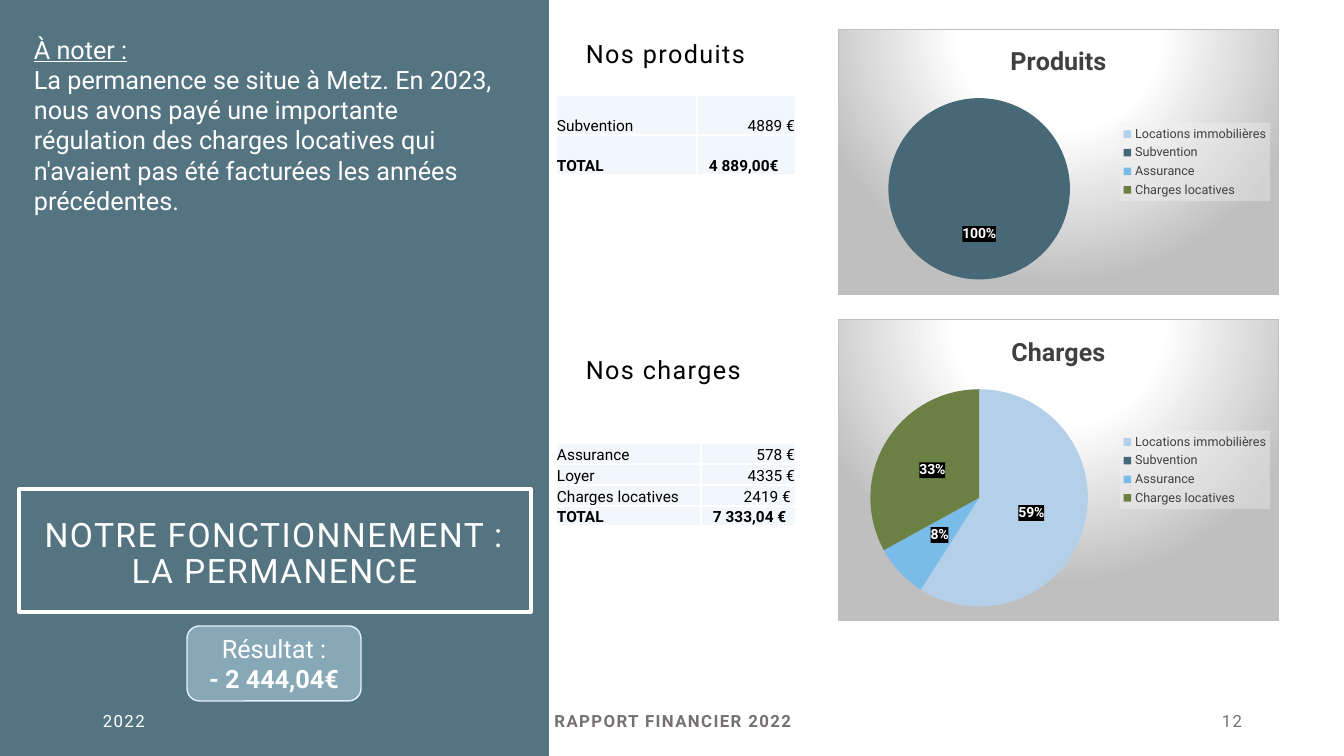
"""Build the finance slide: note, result, tables and pie charts of the office."""
from lxml import etree
from pptx import Presentation
from pptx import util as u
from pptx.chart.data import CategoryChartData
from pptx.dml.color import RGBColor
from pptx.enum import chart as charts, shapes, text
from pptx.oxml import parse_xml
from pptx.oxml.ns import nsdecls, qn

PX = 914400 / 100.8
THEME = {
    "font": "Roboto", "white": "FFFFFF", "black": "000000", "grey": "767171",
    "dark": "404040", "panel": "476977", "badge": "87A9B7", "badge_line": "E4F1FB",
    "cell": "F2F7FB", "border": "BFBFBF", "legend": "F2F2F2",
    "slices": ["B4D0E9", "476977", "79BBE9", "6B8043"],
    "title": 24, "body": 18, "footer": 12, "table": 11, "label": 10, "key": 9,
}
LEFT, CENTER, RIGHT = text.PP_ALIGN.LEFT, text.PP_ALIGN.CENTER, text.PP_ALIGN.RIGHT


def px(*lengths):
    return [u.Emu(round(length * PX)) for length in lengths]


def write(para, words, size, color, align=LEFT, bold=False, spacing=0):
    para.alignment = align
    span = para.add_run()
    span.text = words
    font = span.font
    font.name, font.size, font.bold = THEME["font"], u.Pt(size), bold
    font.color.rgb = RGBColor.from_string(THEME[color])
    if spacing:
        span._r.get_or_add_rPr().set("spc", str(spacing))
    return span


deck = Presentation()
deck.slide_width, deck.slide_height = px(1344, 756)
page = deck.slides.add_slide(deck.slide_layouts[6])

blocks = {}
for name, kind, place, fill, line, weight in [
    ("panel", "RECTANGLE", (0, 0, 549, 756), "panel", None, 0),
    ("frame", "RECTANGLE", (19, 489, 512, 123), None, "white", 2.25),
    ("result", "ROUNDED_RECTANGLE", (187, 626, 174, 75), "badge", "badge_line", 1),
]:
    block = page.shapes.add_shape(getattr(shapes.MSO_SHAPE, kind), *px(*place))
    block.shadow.inherit = False
    if fill:
        block.fill.solid()
        block.fill.fore_color.rgb = RGBColor.from_string(THEME[fill])
    else:
        block.fill.background()
    if line:
        block.line.color.rgb = RGBColor.from_string(THEME[line])
        block.line.width = u.Pt(weight)
    else:
        block.line.fill.background()
    block.text_frame.vertical_anchor = text.MSO_ANCHOR.MIDDLE
    blocks[name] = block

panel_color = blocks["panel"]._element.spPr.find(".//" + qn("a:srgbClr"))
etree.SubElement(panel_color, qn("a:alpha")).set("val", "92000")
blocks["panel"].text_frame.margin_top = px(358)[0]
title = blocks["panel"].text_frame.paragraphs[0]
title.line_spacing = 0.9
write(title, "NOTRE FONCTIONNEMENT :", THEME["title"], "white", CENTER, spacing=100)
title.add_line_break()
write(title, "LA PERMANENCE", THEME["title"], "white", CENTER, spacing=100)

result = blocks["result"].text_frame
write(result.paragraphs[0], "Résultat :", THEME["body"], "white", CENTER)
write(result.add_paragraph(), "- 2 444,04€", THEME["body"], "white", CENTER, True)

for words, place, size, color, align, bold, leading in [
    ("2022", (93, 701, 302, 40), "footer", "white", LEFT, False, 1),
    ("RAPPORT FINANCIER 2022", (446, 701, 454, 40), "footer", "grey", CENTER, True, 1),
    ("12", (950, 701, 302, 40), "footer", "grey", RIGHT, False, 1),
    ("Nos produits", (576, 15, 646, 47), "body", "black", LEFT, False, 2),
    ("Nos charges", (576, 331, 646, 47), "body", "black", LEFT, False, 2),
]:
    box = page.shapes.add_textbox(*px(*place)).text_frame
    box.word_wrap = True
    box.vertical_anchor = text.MSO_ANCHOR.MIDDLE
    box.paragraphs[0].line_spacing = float(leading)
    write(box.paragraphs[0], words, THEME[size], color, align, bold, 100)

note = page.shapes.add_textbox(*px(24, 29, 478, 224)).text_frame
note.word_wrap = True
write(note.paragraphs[0], "À noter :", THEME["body"], "white").font.underline = True
write(note.add_paragraph(),
      "La permanence se situe à Metz. En 2023, nous avons payé une importante régulation "
      "des charges locatives qui n'avaient pas été facturées les années précédentes.",
      THEME["body"], "white")

for top, widths, heights, entries in [
    (95, (141, 99), (40, 40), [("Subvention", "4889 €"), ("TOTAL", "4 889,00€")]),
    (443, (145, 95), (21, 21, 21, 20),
     [("Assurance", "578 €"), ("Loyer", "4335 €"),
      ("Charges locatives", "2419 €"), ("TOTAL", "7 333,04 €")]),
]:
    table = page.shapes.add_table(
        len(entries), 2, *px(556, top, sum(widths), sum(heights))).table
    table.first_row = table.horz_banding = False
    for column, width in zip(table.columns, px(*widths)):
        column.width = width
    for row, height, entry in zip(table.rows, px(*heights), entries):
        row.height = height
        total = entry[0] == "TOTAL"
        for index, (cell, words) in enumerate(zip(row.cells, entry)):
            cell.fill.solid()
            cell.fill.fore_color.rgb = RGBColor.from_string(THEME["cell"])
            cell.vertical_anchor = text.MSO_ANCHOR.BOTTOM
            indent = 12 if total and index else 1
            gap = 5 if words == "2419 €" else 1
            cell.margin_left, cell.margin_right, cell.margin_top, cell.margin_bottom = px(
                indent, gap, 1, 0)
            align = RIGHT if index and not total else LEFT
            write(cell.text_frame.paragraphs[0], words, THEME["table"], "black", align, total)
            for order, side in enumerate("LRTB"):
                cell._tc.get_or_add_tcPr().insert(order, parse_xml(
                    f'<a:ln{side} {nsdecls("a")} w="12700"><a:solidFill>'
                    f'<a:srgbClr val="{THEME["white"]}"/></a:solidFill></a:ln{side}>'))

GRADIENT = (
    '<a:gradFill><a:gsLst>'
    + "".join(f'<a:gs pos="{stop}000"><a:srgbClr val="{THEME[color]}"/></a:gs>'
              for stop, color in [(0, "white"), (39, "white"), (100, "border")])
    + '</a:gsLst><a:path path="circle"><a:fillToRect l="50000" t="-80000" r="50000" b="180000"/>'
    f'</a:path></a:gradFill><a:ln w="9525"><a:solidFill><a:srgbClr val="{THEME["border"]}"/>'
    '</a:solidFill></a:ln>')
VEIL = ('<a:solidFill><a:srgbClr val="{}"><a:alpha val="{}000"/></a:srgbClr></a:solidFill>'
        '<a:ln><a:noFill/></a:ln>')

for name, top, height, values, (pie_left, pie_top, diameter) in [
    ("Produits", 29, 266, (None, 100, None, None), (50, 69, 182)),
    ("Charges", 319, 302, (59, None, 8, 33), (32, 70, 218)),
]:
    data = CategoryChartData()
    data.categories = ["Locations immobilières", "Subvention", "Assurance", "Charges locatives"]
    data.add_series(name, values)
    chart = page.shapes.add_chart(
        charts.XL_CHART_TYPE.PIE, *px(838, top, 441, height), data).chart
    chart.font.name, chart.font.size = THEME["font"], u.Pt(THEME["label"])
    chart.font.color.rgb = RGBColor.from_string(THEME["black"])
    chart.has_title = True
    write(chart.chart_title.text_frame.paragraphs[0], name, THEME["body"], "dark", CENTER, True)
    chart.chart_title.include_in_layout = False

    chart.has_legend = True
    legend = chart.legend
    legend.position = charts.XL_LEGEND_POSITION.RIGHT
    legend.include_in_layout = False
    legend.font.name, legend.font.size = THEME["font"], u.Pt(THEME["key"])
    legend.font.color.rgb = RGBColor.from_string(THEME["dark"])

    plot = chart.plots[0]
    plot.vary_by_categories = True
    for index, color in enumerate(THEME["slices"]):
        slice_fill = plot.series[0].points[index].format.fill
        slice_fill.solid()
        slice_fill.fore_color.rgb = RGBColor.from_string(color)
    labels = plot.series[0].data_labels
    labels.show_percentage, labels.show_value = True, False
    labels.number_format, labels.number_format_is_linked = "0%", False
    labels.position = charts.XL_LABEL_POSITION.CENTER
    labels.font.name, labels.font.size = THEME["font"], u.Pt(THEME["label"])
    labels.font.bold = True
    labels.font.color.rgb = RGBColor.from_string(THEME["white"])

    for owner, paint in [
        (chart._chartSpace, GRADIENT),
        (legend._element, VEIL.format(THEME["legend"], 39)),
        (labels._element, VEIL.format(THEME["black"], 75)),
    ]:
        owner.find(qn("c:txPr")).addprevious(
            parse_xml(f'<c:spPr {nsdecls("c", "a")}>{paint}</c:spPr>'))

    area = chart._chartSpace.chart.plotArea
    for old in area.findall(qn("c:layout")):
        area.remove(old)
    area.insert(0, parse_xml(
        f'<c:layout {nsdecls("c")}><c:manualLayout><c:layoutTarget val="inner"/>'
        '<c:xMode val="edge"/><c:yMode val="edge"/>'
        f'<c:x val="{pie_left / 441}"/><c:y val="{pie_top / height}"/>'
        f'<c:w val="{diameter / 441}"/><c:h val="{diameter / height}"/>'
        '</c:manualLayout></c:layout>'))

deck.save("out.pptx")
